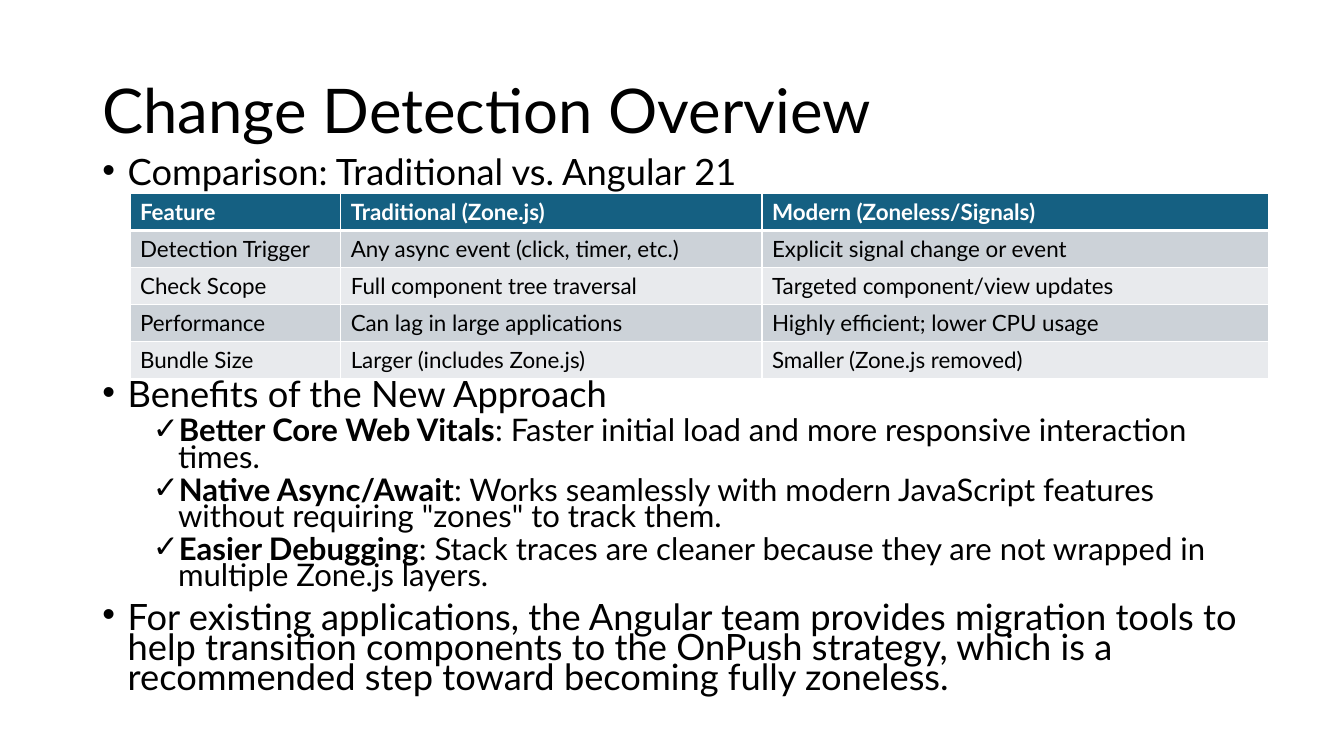
from dataclasses import dataclass

from lxml.etree import SubElement
from pptx import Presentation
from pptx.dml.color import RGBColor
from pptx.enum.text import MSO_ANCHOR, MSO_AUTO_SIZE, PP_ALIGN
from pptx.oxml.ns import qn
from pptx.util import Pt


@dataclass(frozen=True)
class Theme:
    font: str = "Lato"
    bullet_font: str = "Arial"
    ink: str = "000000"
    paper: str = "FFFFFF"
    header: str = "156082"
    bands: tuple = ("CCD2D8", "E8EAED")
    title: float = 44
    point: float = 25.9
    benefit: float = 22.2
    cell: float = 16


THEME = Theme()

TITLE_BOX = (66, 28.8, 828, 104.4)
BODY_BOX = (66, 111.6, 828, 416.2)
TABLE_BOX = (92.9, 138.2, 813.4, 132)
COLUMN_SHARES = (0.185, 0.37, 0.445)
TABLE_GAP = 137

COMPARISON = (
    ("Feature", "Traditional (Zone.js)", "Modern (Zoneless/Signals)"),
    ("Detection Trigger", "Any async event (click, timer, etc.)", "Explicit signal change or event"),
    ("Check Scope", "Full component tree traversal", "Targeted component/view updates"),
    ("Performance", "Can lag in large applications", "Highly efficient; lower CPU usage"),
    ("Bundle Size", "Larger (includes Zone.js)", "Smaller (Zone.js removed)"),
)

BENEFITS = (
    ("Better Core Web Vitals", ": Faster initial load and more responsive interaction times."),
    ("Native Async/Await", ": Works seamlessly with modern JavaScript features without "
     'requiring "zones" to track them.'),
    ("Easier Debugging", ": Stack traces are cleaner because they are not wrapped in "
     "multiple Zone.js layers."),
)

MIGRATION = (
    "For existing applications, the Angular team provides migration tools to help transition "
    "components to the OnPush strategy, which is a recommended step toward becoming fully zoneless."
)


def place(placeholder, box):
    left, top, width, height = (Pt(length) for length in box)
    placeholder.left, placeholder.top = left, top
    placeholder.width, placeholder.height = width, height
    placeholder.text_frame.word_wrap = True
    placeholder.text_frame.auto_size = MSO_AUTO_SIZE.NONE


def add_run(paragraph, text, size, color=THEME.ink, bold=False):
    run = paragraph.add_run()
    run.text = text
    run.font.name = THEME.font
    run.font.size = Pt(size)
    run.font.bold = bold
    run.font.color.rgb = RGBColor.from_string(color)


def set_bullet(paragraph, mark, indent):
    properties = paragraph._p.get_or_add_pPr()
    properties.set("marL", str(Pt(indent)))
    properties.set("indent", str(Pt(-18)))
    SubElement(properties, qn("a:buFont")).set("typeface", THEME.bullet_font)
    SubElement(properties, qn("a:buChar")).set("char", mark)


def build_title(title, box):
    place(title, box)
    title.text_frame.vertical_anchor = MSO_ANCHOR.MIDDLE
    heading = title.text_frame.paragraphs[0]
    heading.alignment = PP_ALIGN.LEFT
    heading.line_spacing = 0.9
    add_run(heading, "Change Detection Overview", THEME.title)


def build_body(body, box):
    place(body, box)
    frame = body.text_frame
    frame.vertical_anchor = MSO_ANCHOR.TOP

    def add_item(paragraph, space_before, level=0):
        paragraph.level = level
        paragraph.line_spacing = 0.7
        paragraph.space_before = Pt(space_before)
        set_bullet(paragraph, "•✓"[level], 18 + 36 * level)
        return paragraph

    comparison = add_item(frame.paragraphs[0], 0)
    add_run(comparison, "Comparison: Traditional vs. Angular 21", THEME.point)
    approach = add_item(frame.add_paragraph(), TABLE_GAP)
    add_run(approach, "Benefits of the New Approach", THEME.point)
    for name, explanation in BENEFITS:
        benefit = add_item(frame.add_paragraph(), 5, level=1)
        add_run(benefit, name, THEME.benefit, bold=True)
        add_run(benefit, explanation, THEME.benefit)
    migration = add_item(frame.add_paragraph(), 10)
    add_run(migration, MIGRATION, THEME.point)


def set_borders(cell, top, bottom):
    properties = cell._tc.get_or_add_tcPr()
    for side, width in (("lnL", 1), ("lnR", 1), ("lnT", top), ("lnB", bottom)):
        line = SubElement(properties, qn(f"a:{side}"), w=str(Pt(width)))
        fill = SubElement(line, qn("a:solidFill"))
        SubElement(fill, qn("a:srgbClr"), val=THEME.paper)


def build_comparison(slide, box):
    left, top, width, height = box
    row_count = len(COMPARISON)
    table = slide.shapes.add_table(
        row_count, len(COLUMN_SHARES), Pt(left), Pt(top), Pt(width), Pt(height)
    ).table
    table.horz_banding = False
    for column, share in zip(table.columns, COLUMN_SHARES):
        column.width = Pt(width * share)
    for index, labels in enumerate(COMPARISON):
        table.rows[index].height = Pt(height / row_count)
        is_header = index == 0
        fill = THEME.header if is_header else THEME.bands[(index - 1) % 2]
        color = THEME.paper if is_header else THEME.ink
        for cell, label in zip(table.rows[index].cells, labels):
            set_borders(cell, 3 if index == 1 else 1, 3 if is_header else 1)
            cell.fill.solid()
            cell.fill.fore_color.rgb = RGBColor.from_string(fill)
            add_run(cell.text_frame.paragraphs[0], label, THEME.cell, color, is_header)


def main():
    presentation = Presentation()
    presentation.slide_width, presentation.slide_height = Pt(960), Pt(540)
    slide = presentation.slides.add_slide(presentation.slide_layouts[1])
    build_title(slide.shapes.title, TITLE_BOX)
    build_body(slide.placeholders[1], BODY_BOX)
    build_comparison(slide, TABLE_BOX)
    presentation.save("out.pptx")


if __name__ == "__main__":
    main()
